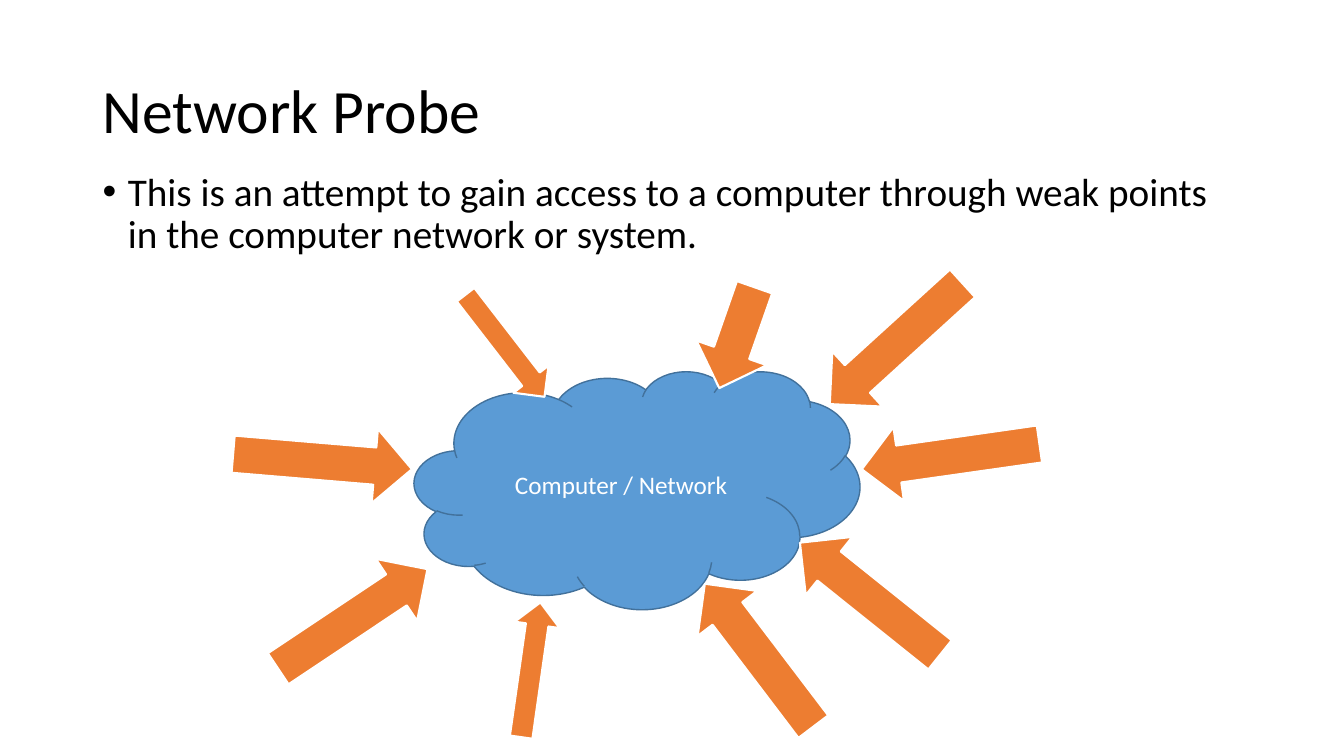
from dataclasses import dataclass

from lxml import etree
from pptx import Presentation
from pptx.dml.color import RGBColor
from pptx.enum.shapes import MSO_SHAPE
from pptx.enum.text import MSO_ANCHOR, PP_ALIGN
from pptx.oxml.ns import qn
from pptx.util import Emu, Inches, Pt

CLOUD, DOWN_ARROW = MSO_SHAPE.CLOUD, MSO_SHAPE.DOWN_ARROW
TOP, MIDDLE = MSO_ANCHOR.TOP, MSO_ANCHOR.MIDDLE
LEFT, CENTER = PP_ALIGN.LEFT, PP_ALIGN.CENTER

FONT = "Calibri"
BLACK, WHITE = "000000", "FFFFFF"
BLUE, DARK_BLUE, ORANGE = "5B9BD5", "42719B", "ED7D31"

# The grid has 100 columns and 100 rows
SLIDE_WIDTH, SLIDE_HEIGHT = Inches(13.33), Inches(7.5)
COLUMN, ROW = SLIDE_WIDTH / 100, SLIDE_HEIGHT / 100


@dataclass(frozen=True)
class Area:
    """A rectangle in columns and rows."""
    left: float
    top: float
    width: float
    height: float

    def emu(self):
        return (Emu(round(self.left * COLUMN)), Emu(round(self.top * ROW)),
                Emu(round(self.width * COLUMN)), Emu(round(self.height * ROW)))


@dataclass(frozen=True)
class ProbeArrow:
    """An arrow around its centre, turned clockwise from pointing down."""
    center_x: float
    center_y: float
    angle: float
    width: float = 5.55
    length: float = 23.73

    def area(self) -> Area:
        return Area(self.center_x - self.width / 2,
                    self.center_y - self.length / 2, self.width, self.length)


TITLE_AREA = Area(6.9, 5.33, 86.25, 19.33)
BODY_AREA = Area(6.9, 22.13, 86.25, 63.47)
CLOUD_AREA = Area(30.83, 49.07, 33.15, 31.47)

PROBE_ARROWS = [
    ProbeArrow(66.68, 45.47, 47.7),
    ProbeArrow(70.73, 60.4, 81.9),
    ProbeArrow(54.83, 44.67, 19.3, length=14.13),
    ProbeArrow(64.73, 79.2, 128.7),
    ProbeArrow(37.58, 45.73, 322.3, width=3.3, length=17.07),
    ProbeArrow(24, 61.07, 274.8),
    ProbeArrow(26.25, 81.87, 236.3),
    ProbeArrow(39.49, 88.6, 188.1, width=3.38, length=18),
    ProbeArrow(56.48, 86.67, 142.8),
]


def color(hex_code: str) -> RGBColor:
    return RGBColor.from_string(hex_code)


def write_text(box, text: str, *, size: float, ink: str = BLACK, anchor=TOP,
               align=LEFT, spacing: float = 1.0, bullet: str = "") -> None:
    frame = box.text_frame
    frame.word_wrap = True
    frame.vertical_anchor = anchor
    para = frame.paragraphs[0]
    para.alignment = align
    para.line_spacing = spacing
    if bullet:
        properties = para._p.get_or_add_pPr()
        indent = Inches(0.25)
        properties.set("marL", str(indent))
        properties.set("indent", str(-indent))
        etree.SubElement(properties, qn("a:buFont"), typeface="Arial")
        etree.SubElement(properties, qn("a:buChar"), char=bullet)
    span = para.add_run()
    span.text = text
    span.font.name = FONT
    span.font.size = Pt(size)
    span.font.color.rgb = color(ink)


def add_figure(page, kind, area: Area, *, fill: str, line: str,
               line_width: float, angle: float = 0):
    figure = page.shapes.add_shape(kind, *area.emu())
    figure.shadow.inherit = False
    figure.fill.solid()
    figure.fill.fore_color.rgb = color(fill)
    figure.line.color.rgb = color(line)
    figure.line.width = Pt(line_width)
    figure.rotation = angle
    return figure


def main() -> None:
    deck = Presentation()
    deck.slide_width, deck.slide_height = SLIDE_WIDTH, SLIDE_HEIGHT
    page = deck.slides.add_slide(deck.slide_layouts[6])

    # Title and definition
    title = page.shapes.add_textbox(*TITLE_AREA.emu())
    write_text(title, "Network Probe", size=44, anchor=MIDDLE, spacing=0.9)
    body = page.shapes.add_textbox(*BODY_AREA.emu())
    write_text(body, "This is an attempt to gain access to a computer through "
               "weak points in the computer network or system.",
               size=28, spacing=0.9, bullet="•")

    # Target of the probes
    cloud = add_figure(page, CLOUD, CLOUD_AREA, fill=BLUE, line=DARK_BLUE,
                       line_width=1)
    write_text(cloud, "Computer / Network", size=18, ink=WHITE,
               anchor=MIDDLE, align=CENTER)

    # Probes from all sides
    for arrow in PROBE_ARROWS:
        add_figure(page, DOWN_ARROW, arrow.area(), fill=ORANGE, line=WHITE,
                   line_width=1.5, angle=arrow.angle)

    deck.save("out.pptx")


if __name__ == "__main__":
    main()
